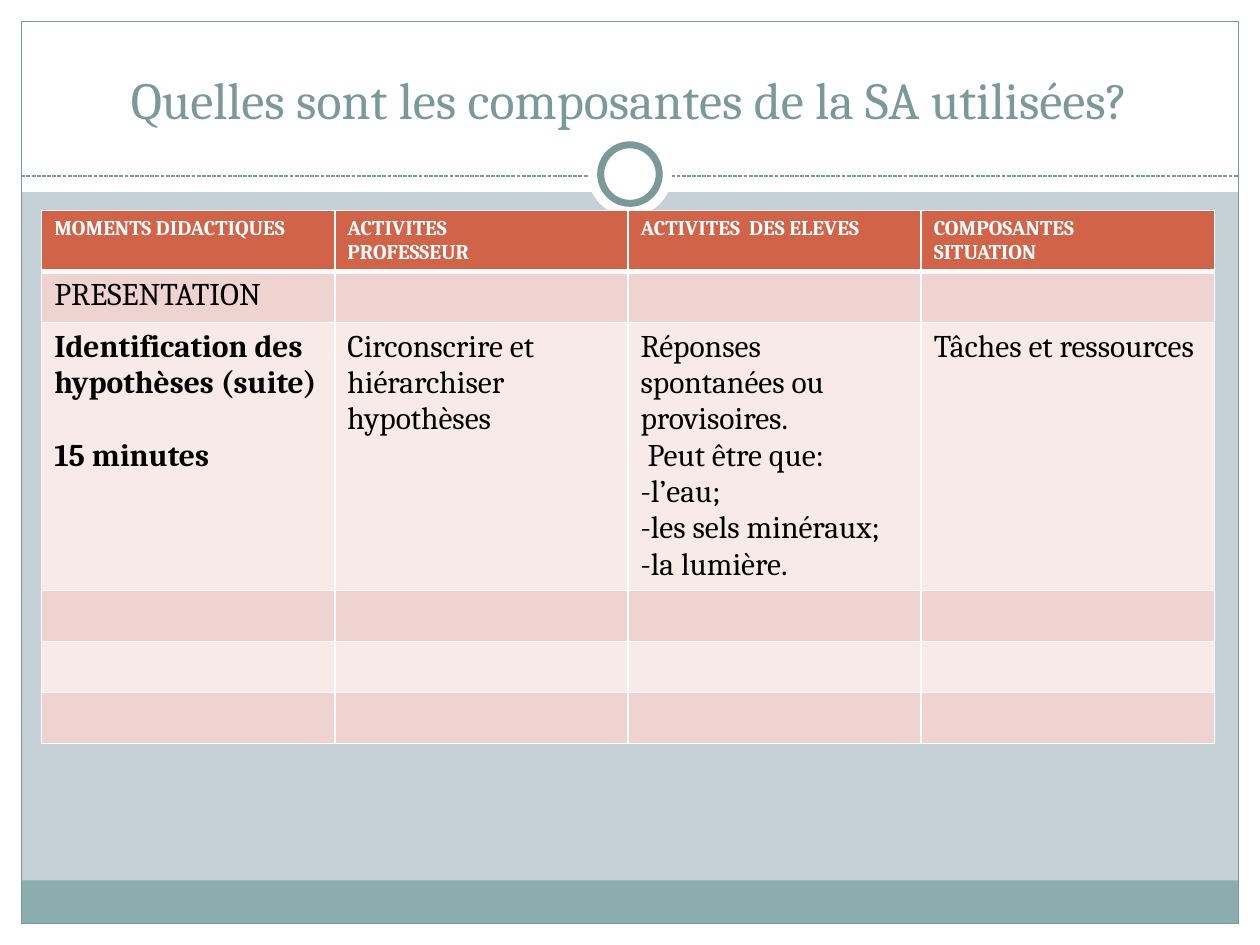
from dataclasses import dataclass

from lxml.etree import SubElement
from pptx import Presentation
from pptx.dml.color import RGBColor
from pptx.enum.dml import MSO_LINE
from pptx.enum.shapes import MSO_CONNECTOR, MSO_SHAPE
from pptx.enum.text import MSO_ANCHOR, MSO_AUTO_SIZE, PP_ALIGN
from pptx.oxml.ns import qn
from pptx.util import Cm, Pt


@dataclass(frozen=True)
class Theme:
    """Colours, font and type sizes of the slide."""
    font: str = "Cambria"
    white: str = "FFFFFF"
    ink: str = "000000"
    backdrop: str = "C5D1D7"
    accent: str = "7C999A"
    footer: str = "8CADAE"
    header: str = "D16349"
    bands: tuple = ("EED3D0", "F7EAE9")
    title_size: float = 29.7
    header_size: float = 12
    body_size: float = 18
    block_gap: float = 21


def rgb(code):
    """Turn a hex code into a colour."""
    return RGBColor.from_string(code)


def write_text(frame, text, *, font, size, color, bold=False, align=PP_ALIGN.LEFT, gap=0):
    """Write one paragraph per line, with a gap before each later block."""
    paragraph = None
    for block_index, block in enumerate(text.split("\n\n")):
        for line_index, line in enumerate(block.split("\n")):
            paragraph = frame.add_paragraph() if paragraph is not None else frame.paragraphs[0]
            paragraph.alignment = align
            paragraph.space_before = Pt(gap if block_index and not line_index else 0)
            run = paragraph.add_run()
            run.text = line
            run.font.name, run.font.size, run.font.bold = font, Pt(size), bold
            run.font.color.rgb = rgb(color)


class LessonSlide:
    """Hold the theme and the current slide, and draw each kind of element."""

    def __init__(self, presentation, theme):
        """Add a title-only slide with its background."""
        self.theme = theme
        self.slide = presentation.slides.add_slide(presentation.slide_layouts[5])
        self.slide.background.fill.solid()
        self.slide.background.fill.fore_color.rgb = rgb(theme.backdrop)

    def shape(self, preset, left, top, width, height, fill=None, line=None, weight=0.75):
        """Draw a preset shape without shadow."""
        figure = self.slide.shapes.add_shape(preset, Cm(left), Cm(top), Cm(width), Cm(height))
        figure.shadow.inherit = False
        if fill:
            figure.fill.solid()
            figure.fill.fore_color.rgb = rgb(fill)
        else:
            figure.fill.background()
        if line:
            figure.line.color.rgb = rgb(line)
            figure.line.width = Pt(weight)
        else:
            figure.line.fill.background()

    def circle(self, center_x, center_y, diameter, **style):
        """Draw a circle around its centre."""
        self.shape(MSO_SHAPE.OVAL, center_x - diameter / 2, center_y - diameter / 2,
                   diameter, diameter, **style)

    def dashed_rule(self, left, right, top):
        """Draw a horizontal dashed line."""
        rule = self.slide.shapes.add_connector(
            MSO_CONNECTOR.STRAIGHT, Cm(left), Cm(top), Cm(right), Cm(top))
        rule.line.color.rgb = rgb(self.theme.accent)
        rule.line.width = Pt(0.75)
        rule.line.dash_style = MSO_LINE.SQUARE_DOT
        SubElement(rule._element.spPr, qn("a:effectLst"))

    def title(self, text, left, top, width, height):
        """Place the title placeholder in front and fill it."""
        heading = self.slide.shapes.title
        heading.left, heading.top, heading.width, heading.height = map(
            Cm, (left, top, width, height))
        frame = heading.text_frame
        frame.auto_size, frame.word_wrap = MSO_AUTO_SIZE.NONE, True
        frame.vertical_anchor = MSO_ANCHOR.BOTTOM
        write_text(frame, text, font=self.theme.font, size=self.theme.title_size,
                   color=self.theme.accent, align=PP_ALIGN.CENTER)
        self.slide.shapes._spTree.append(heading._element)

    def borders(self, cell, top=1, bottom=1):
        """Give a cell white borders."""
        properties = cell._tc.get_or_add_tcPr()
        for side, weight in (("L", 1), ("R", 1), ("T", top), ("B", bottom)):
            edge = SubElement(properties, qn(f"a:ln{side}"), w=str(Pt(weight)))
            paint = SubElement(edge, qn("a:solidFill"))
            SubElement(paint, qn("a:srgbClr"), val=self.theme.white)

    def table(self, rows, bold_cells, left, top, column_width, row_heights):
        """Draw the banded table with its header row."""
        theme = self.theme
        columns = len(rows[0])
        grid = self.slide.shapes.add_table(
            len(rows), columns, Cm(left), Cm(top),
            Cm(column_width * columns), Cm(sum(row_heights))).table
        grid.horz_banding = False
        for column in grid.columns:
            column.width = Cm(column_width)
        for r, (texts, height) in enumerate(zip(rows, row_heights)):
            grid.rows[r].height = Cm(height)
            header = r == 0
            for c, text in enumerate(texts):
                cell = grid.cell(r, c)
                self.borders(cell, top=3 if r == 1 else 1, bottom=3 if header else 1)
                cell.fill.solid()
                cell.fill.fore_color.rgb = rgb(theme.header if header else theme.bands[(r - 1) % 2])
                if text:
                    write_text(cell.text_frame, text, font=theme.font,
                               size=theme.header_size if header else theme.body_size,
                               color=theme.white if header else theme.ink,
                               bold=header or (r, c) in bold_cells, gap=theme.block_gap)


def main():
    """Build the slide and save it."""
    theme = Theme()
    presentation = Presentation()
    page_width, page_height = 25.4, 19.05
    presentation.slide_width, presentation.slide_height = Cm(page_width), Cm(page_height)
    lesson = LessonSlide(presentation, theme)

    margin = 0.43
    inner_width, inner_height = page_width - 2 * margin, page_height - 2 * margin
    for edge in ((0, page_height - margin, page_width, margin),
                 (0, 0, page_width, 3.87),
                 (0, 0, margin, page_height),
                 (page_width - margin, 0, margin, page_height)):
        lesson.shape(MSO_SHAPE.RECTANGLE, *edge, fill=theme.white)
    footer_height = 0.87
    lesson.shape(MSO_SHAPE.RECTANGLE, margin, page_height - margin - footer_height,
                 inner_width, footer_height, fill=theme.footer)
    lesson.shape(MSO_SHAPE.RECTANGLE, margin, margin, inner_width, inner_height,
                 line=theme.accent)
    lesson.dashed_rule(margin, page_width - margin, 3.55)
    ring_center = (page_width / 2, 3.51)
    lesson.circle(*ring_center, 1.7, fill=theme.white)
    lesson.circle(*ring_center, 1.18, fill=theme.white, line=theme.accent, weight=4)

    lesson.title("Quelles sont les composantes de la SA utilisées?", 0.85, 0.64, 23.7, 2.1)
    empty_row = ("",) * 4
    steps = [
        ("MOMENTS DIDACTIQUES", "ACTIVITES\nPROFESSEUR",
         "ACTIVITES  DES ELEVES", "COMPOSANTES\nSITUATION"),
        ("PRESENTATION", "", "", ""),
        ("Identification des hypothèses (suite)\n\n15 minutes",
         "Circonscrire et hiérarchiser\nhypothèses",
         "Réponses spontanées ou provisoires.\n Peut être que:\n-l’eau;\n"
         "-les sels minéraux;\n-la lumière.",
         "Tâches et ressources"),
        empty_row, empty_row, empty_row,
    ]
    lesson.table(steps, {(2, 0)}, 0.84, 4.24, 5.91, (1.21, 1.03, 5.4, 1.03, 1.03, 1.03))
    presentation.save("out.pptx")


if __name__ == "__main__":
    main()
